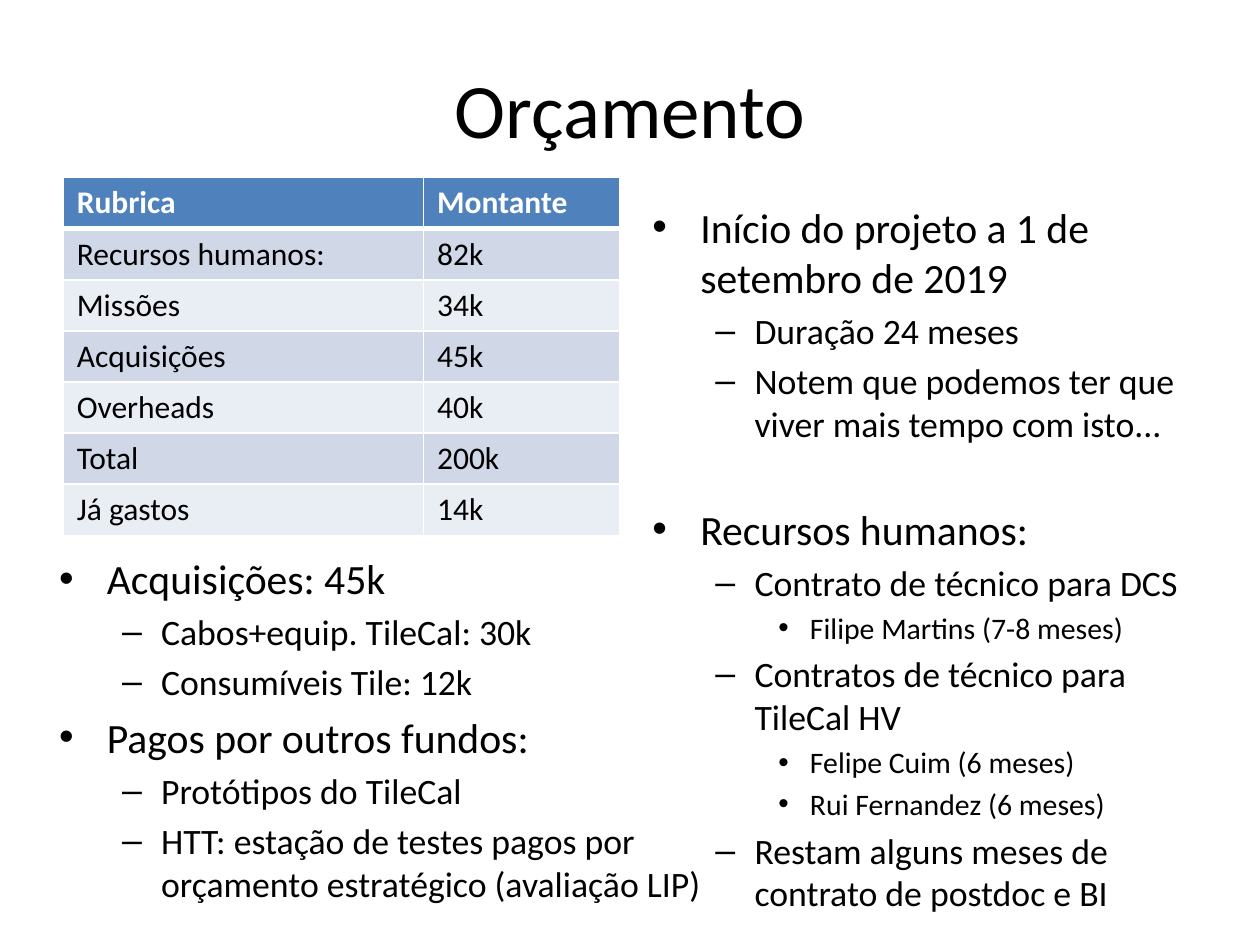
"""Build the project budget slide with a table and two bullet lists."""
from dataclasses import dataclass

from lxml import etree
from pptx import Presentation
from pptx.dml import color as dml
from pptx.enum import text
from pptx.oxml import ns
from pptx.util import Inches, Pt


@dataclass(frozen=True)
class Theme:
    font: str = "Calibri"
    ink: str = "000000"
    white: str = "FFFFFF"
    header: str = "4F81BD"
    bands: tuple = ("D0D8E8", "E9EDF4")
    title: float = 44
    table: float = 18
    levels: tuple = (23.8, 20.4, 17)


THEME = Theme()
BULLETS = (("•", 0.38, 0.38), ("–", 0.81, 0.31), ("•", 1.25, 0.25))
LINE_HEIGHT = 1.22

BUDGET = [
    ("Rubrica", "Montante"),
    ("Recursos humanos:", "82k"),
    ("Missões", "34k"),
    ("Acquisições", "45k"),
    ("Overheads", "40k"),
    ("Total", "200k"),
    ("Já gastos", "14k"),
]
SCHEDULE = [
    (0, "Início do projeto a 1 de setembro de 2019"),
    (1, "Duração 24 meses"),
    (1, "Notem que podemos ter que viver mais tempo com isto..."),
]
STAFF = [
    (0, "Recursos humanos:"),
    (1, "Contrato de técnico para DCS"),
    (2, "Filipe Martins (7-8 meses)"),
    (1, "Contratos de técnico para TileCal HV"),
    (2, "Felipe Cuim (6 meses)"),
    (2, "Rui Fernandez (6 meses)"),
    (1, "Restam alguns meses de contrato de postdoc e BI"),
]
PURCHASES = [
    (0, "Acquisições: 45k"),
    (1, "Cabos+equip. TileCal: 30k"),
    (1, "Consumíveis Tile: 12k"),
    (0, "Pagos por outros fundos:"),
    (1, "Protótipos do TileCal"),
    (1, "HTT: estação de testes pagos por orçamento estratégico (avaliação LIP)"),
]


def write(p, words, size, color=THEME.ink, bold=False, align=text.PP_ALIGN.LEFT):
    p.alignment = align
    r = p.add_run()
    r.text = words
    r.font.name = THEME.font
    r.font.size = Pt(size)
    r.font.bold = bold
    r.font.color.rgb = dml.RGBColor.from_string(color)


def set_bullet(p, level):
    char, left, hang = BULLETS[level]
    p.level = level
    pPr = p._p.get_or_add_pPr()
    pPr.set("marL", str(Inches(left)))
    pPr.set("indent", str(-Inches(hang)))
    etree.SubElement(pPr, ns.qn("a:buFont")).set("typeface", "Arial")
    etree.SubElement(pPr, ns.qn("a:buChar")).set("char", char)


def add_bullets(s, box, *groups):
    tf = s.shapes.add_textbox(*map(Inches, box)).text_frame
    tf.word_wrap = True
    p = tf.paragraphs[0]
    for g, group in enumerate(groups):
        for i, (level, words) in enumerate(group):
            if g or i:
                p = tf.add_paragraph()
            size = THEME.levels[level]
            gap = 0.2 * size
            if g and i == 0:
                gap += (LINE_HEIGHT + 0.2) * THEME.levels[1]
            p.space_before = Pt(gap)
            set_bullet(p, level)
            write(p, words, size)


def set_borders(cell, **widths):
    tcPr = cell._tc.get_or_add_tcPr()
    for i, side in enumerate("LRTB"):
        ln = etree.Element(ns.qn(f"a:ln{side}"), w=str(Pt(widths.get(side, 1))))
        fill = etree.SubElement(ln, ns.qn("a:solidFill"))
        etree.SubElement(fill, ns.qn("a:srgbClr")).set("val", THEME.white)
        tcPr.insert(i, ln)


def add_budget(s, box, widths):
    table = s.shapes.add_table(len(BUDGET), len(widths), *map(Inches, box)).table
    for column, width in zip(table.columns, widths):
        column.width = Inches(width)
    for i, row in enumerate(BUDGET):
        head = i == 0
        fill = THEME.header if head else THEME.bands[(i - 1) % 2]
        for j, words in enumerate(row):
            cell = table.cell(i, j)
            cell.margin_left = cell.margin_right = Inches(0.11)
            cell.fill.solid()
            cell.fill.fore_color.rgb = dml.RGBColor.from_string(fill)
            set_borders(cell, T=3 if i == 1 else 1, B=3 if head else 1)
            write(cell.text_frame.paragraphs[0], words, THEME.table,
                  color=THEME.white if head else THEME.ink, bold=head)


def add_title(s, box, words):
    sp = s.shapes.title
    sp.left, sp.top, sp.width, sp.height = map(Inches, box)
    tf = sp.text_frame
    tf.vertical_anchor = text.MSO_ANCHOR.MIDDLE
    write(tf.paragraphs[0], words, THEME.title, align=text.PP_ALIGN.CENTER)


def main():
    prs = Presentation()
    prs.slide_width, prs.slide_height = Inches(10), Inches(7.5)
    s = prs.slides.add_slide(prs.slide_layouts[5])
    add_title(s, (0.5, 0.3, 9, 1.11), "Orçamento")
    add_budget(s, (0.5, 1.41, 4.42, 2.84), (2.86, 1.56))
    add_bullets(s, (5.08, 1.55, 4.42, 5.13), SCHEDULE, STAFF)
    add_bullets(s, (0.37, 4.34, 5.38, 2.81), PURCHASES)
    prs.save("out.pptx")


if __name__ == "__main__":
    main()
